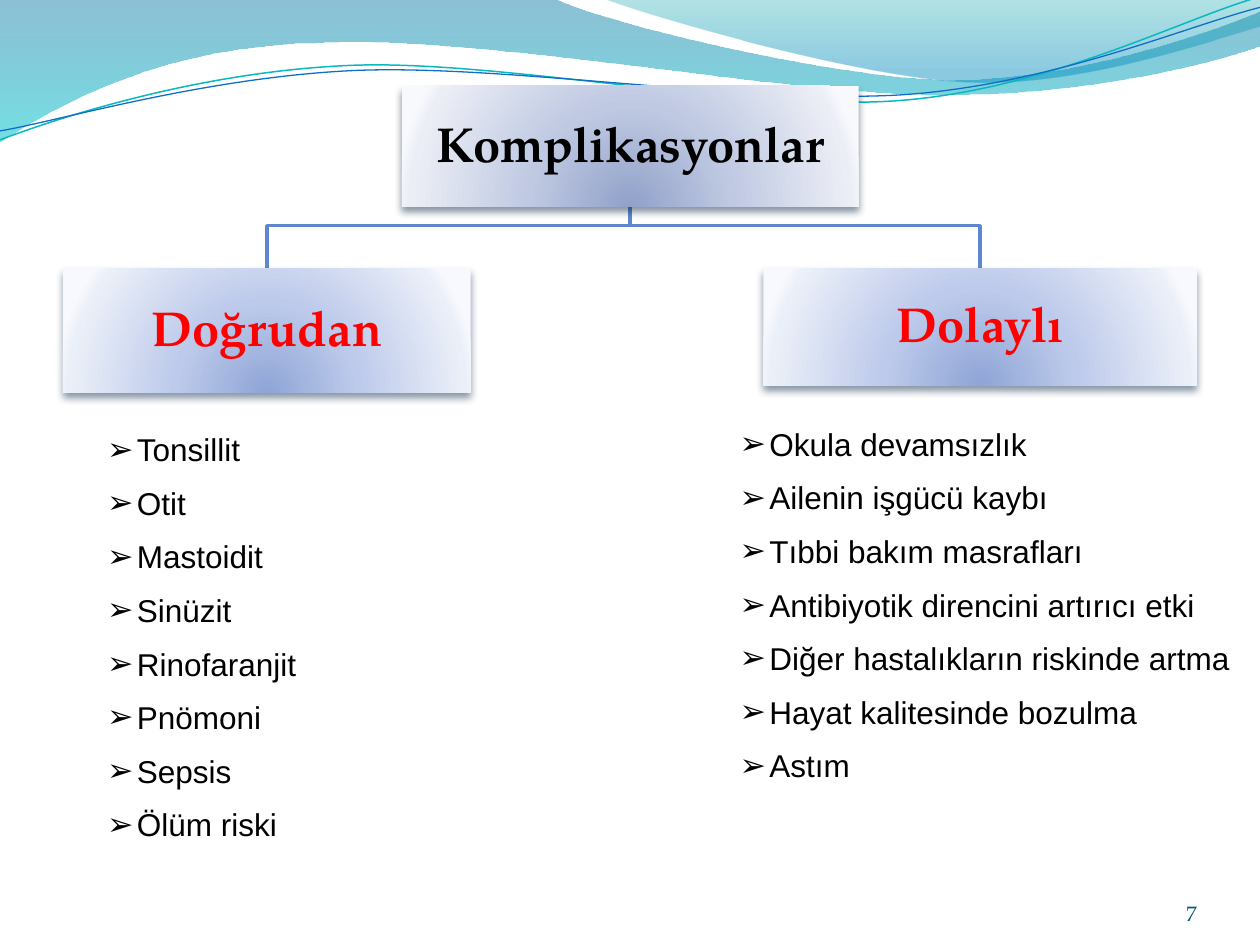
from dataclasses import dataclass

from lxml import etree
from pptx import Presentation
from pptx import util as u
from pptx.dml.color import RGBColor
from pptx.enum import shapes, text
from pptx.oxml.ns import qn

Cm, Pt = u.Cm, u.Pt


@dataclass(frozen=True)
class Theme:
    head_font: str = "TeX Gyre Pagella"
    body_font: str = "Arial"
    head_size: float = 28
    body_size: float = 18
    number_size: float = 12
    black: str = "000000"
    red: str = "FF0000"
    number: str = "045C75"
    link: str = "5E87CD"
    teal_line: str = "0AB8BF"
    blue_line: str = "0F6FC6"
    # Gradient stops: position %, colour, opacity %
    wide_wave: tuple = ((0, "0074A1", 45), (100, "00C6CF", 55))
    right_wave: tuple = ((0, "00A1A9", 30), (80, "008BBF", 45))
    root_box: tuple = ((0, "91A1C9", 100), (43, "BFC9E2", 100),
                       (93, "ECEEF6", 100), (100, "F8F9FD", 100))
    child_box: tuple = ((0, "8FA5D6", 100), (43, "BDCAEB", 100),
                        (93, "EBEFF8", 100), (100, "F7F9FE", 100))
    root_shadow: str = "031F39"
    child_shadow: str = "032341"


T = Theme()

# Wave outlines in cm: a start point, then lines (1 point) or curves (3 points)
WIDE_WAVE = [(0, -0.03), [(11.18, -0.03)],
             [(12.09, 0.43), (16.87, 1.6), (19.25, 1.6)],
             [(21.67, 1.6), (24.33, 0.66), (25.4, 0.23)], [(25.43, 0.91)],
             [(24.97, 1.12), (22.1, 1.93), (18.95, 1.91)],
             [(15.8, 1.91), (9.7, 0.71), (6.53, 0.86)],
             [(3.28, 0.89), (1.17, 2.11), (-0.03, 2.87)], [(0, -0.03)]]
RIGHT_WAVE = [(12.17, -0.03), [(12.93, 0.28), (17.32, 1.57), (19.53, 1.65)],
              [(21.74, 1.75), (24.41, 0.81), (25.4, 0.53)], [(25.4, 0)],
              [(12.17, -0.03)]]
TEAL_LINE = [(0, 2.82), [(1.22, 2.36), (4.01, 1.45), (7.04, 1.32)],
             [(10.03, 1.19), (15.06, 2.26), (18.11, 2.03)],
             [(21.16, 1.8), (23.83, 0.38), (25.35, -0.05)]]
BLUE_LINE = [(0, 2.64), [(1.19, 2.44), (4.17, 1.55), (7.19, 1.42)],
             [(10.24, 1.3), (15.16, 2.11), (18.21, 1.91)],
             [(21.23, 1.7), (23.9, 0.53), (25.4, 0.15)]]

DIRECT = ["Tonsillit", "Otit", "Mastoidit", "Sinüzit", "Rinofaranjit",
          "Pnömoni", "Sepsis", "Ölüm riski"]
INDIRECT = ["Okula devamsızlık", "Ailenin işgücü kaybı",
            "Tıbbi bakım masrafları", "Antibiyotik direncini artırıcı etki",
            "Diğer hastalıkların riskinde artma", "Hayat kalitesinde bozulma",
            "Astım"]


def add(parent, tag, **attrs):
    return etree.SubElement(parent, qn(tag), {k: str(v) for k, v in attrs.items()})


def add_color(parent, color, opacity):
    clr = add(parent, "a:srgbClr", val=color)
    if opacity < 100:
        add(clr, "a:alpha", val=opacity * 1000)


def set_font(font, name, size, color, bold=False):
    for key, value in dict(name=name, size=Pt(size), bold=bold).items():
        setattr(font, key, value)
    font.color.rgb = RGBColor.from_string(color)


def set_gradient(sp, stops, radial=False):
    sp.fill.background()
    sp_pr = sp._element.spPr
    grad = etree.Element(qn("a:gradFill"), rotWithShape="1")
    stop_list = add(grad, "a:gsLst")
    for pos, color, opacity in stops:
        add_color(add(stop_list, "a:gs", pos=pos * 1000), color, opacity)
    if radial:
        add(add(grad, "a:path", path="circle"), "a:fillToRect",
            l=50000, t=130000, r=50000, b=-30000)
    else:
        add(grad, "a:lin", ang=5400000, scaled=0)
    sp_pr.replace(sp_pr.find(qn("a:noFill")), grad)


def set_shadow(sp, color):
    effects = sp._element.spPr.find(qn("a:effectLst"))
    shadow = add(effects, "a:outerShdw", blurRad=Pt(4.5), dist=Pt(3),
                 dir=5400000, rotWithShape=0)
    add_color(shadow, color, 48)


def add_outline(s, start, segments, stops=None, line=None, width=0):
    """Draw lines and cubic curves, given in cm, as one freeform."""
    builder = s.shapes.build_freeform(*map(Cm, start), scale=1.0)
    points = [(Cm(x), Cm(y)) for segment in segments for x, y in segment]
    builder.add_line_segments(points, close=stops is not None)
    sp = builder.convert_to_shape()
    # Merge each run of three control points into one curve
    nodes = iter(list(sp._element.iter(qn("a:lnTo"))))
    for segment in segments:
        group = [next(nodes) for _ in segment]
        if len(group) == 3:
            curve = etree.Element(qn("a:cubicBezTo"))
            group[0].addprevious(curve)
            for node in group:
                curve.append(node[0])
                node.getparent().remove(node)
    sp.shadow.inherit = False
    if stops:
        set_gradient(sp, stops)
        sp.line.fill.background()
    else:
        sp.fill.background()
        sp.line.color.rgb = RGBColor.from_string(line)
        sp.line.width = Pt(width)


def add_waves(s):
    for path, style in ((WIDE_WAVE, dict(stops=T.wide_wave)),
                        (RIGHT_WAVE, dict(stops=T.right_wave)),
                        (TEAL_LINE, dict(line=T.teal_line, width=0.85)),
                        (BLUE_LINE, dict(line=T.blue_line, width=0.75))):
        add_outline(s, path[0], path[1:], **style)


def format_box(sp, label, box, color, stops, shadow):
    for key, value in zip(("left", "top", "width", "height"), box):
        setattr(sp, key, Cm(value))
    sp.shadow.inherit = False
    set_gradient(sp, stops, radial=True)
    sp.line.fill.background()
    set_shadow(sp, shadow)
    tf = sp.text_frame
    tf.text = label
    tf.word_wrap = True
    tf.auto_size = text.MSO_AUTO_SIZE.NONE
    tf.vertical_anchor = text.MSO_ANCHOR.MIDDLE
    for side in ("left", "top", "right", "bottom"):
        setattr(tf, f"margin_{side}", Cm(0.05))
    p = tf.paragraphs[0]
    p.alignment = text.PP_ALIGN.CENTER
    p.line_spacing = 0.9
    set_font(p.runs[0].font, T.head_font, T.head_size, color, bold=True)


def add_tree(s, root_label, root_box, children, bend_y):
    """Title box with an angled link down to each child box."""
    left, top, width, height = root_box
    mid, bottom = left + width / 2, top + height
    for _, (x, y, w, _) in reversed(children):
        end = x + w / 2
        add_outline(s, (mid, bottom), [[(mid, bend_y)], [(end, bend_y)], [(end, y)]],
                    line=T.link, width=2)
    root = s.shapes.title
    format_box(root, root_label, root_box, T.black, T.root_box, T.root_shadow)
    s.shapes._spTree.append(root._element)  # in front of the waves
    for label, box in children:
        sp = s.shapes.add_shape(shapes.MSO_SHAPE.RECTANGLE, 0, 0, 0, 0)
        format_box(sp, label, box, T.red, T.child_box, T.child_shadow)


def add_list(s, items, box):
    tf = s.shapes.add_textbox(*map(Cm, box)).text_frame
    tf.word_wrap = True
    tf.auto_size = text.MSO_AUTO_SIZE.SHAPE_TO_FIT_TEXT
    for i, item in enumerate(items):
        p = tf.add_paragraph() if i else tf.paragraphs[0]
        p_pr = p._p.get_or_add_pPr()
        p_pr.set("marL", str(Cm(0.6)))
        p_pr.set("indent", str(-Cm(0.6)))
        add(p_pr, "a:buFont", typeface=T.body_font)
        add(p_pr, "a:buChar", char="➢")
        p.space_before = Pt(9 if i else 0)
        r = p.add_run()
        r.text = item
        set_font(r.font, T.body_font, T.body_size, T.black)


def add_number(s, number, box):
    tf = s.shapes.add_textbox(*map(Cm, box)).text_frame
    tf.margin_left = tf.margin_top = tf.margin_right = tf.margin_bottom = 0
    tf.word_wrap = True
    tf.vertical_anchor = text.MSO_ANCHOR.BOTTOM
    p = tf.paragraphs[0]
    p.alignment = text.PP_ALIGN.RIGHT
    r = p.add_run()
    r.text = number
    set_font(r.font, T.head_font, T.number_size, T.number)


def main():
    prs = Presentation()
    prs.slide_width, prs.slide_height = Cm(25.4), Cm(19.05)
    s = prs.slides.add_slide(prs.slide_layouts[5])
    add_waves(s)
    # Hierarchy
    add_tree(s, "Komplikasyonlar", (8.1, 1.73, 9.21, 2.44),
             [("Doğrudan", (1.27, 5.41, 8.22, 2.51)),
              ("Dolaylı", (15.39, 5.41, 8.74, 2.36))], bend_y=4.55)
    # Lists and slide number
    add_list(s, DIRECT, (1.91, 8.55, 11.94, 9.12))
    add_list(s, INDIRECT, (14.66, 8.44, 10.72, 7.95))
    add_number(s, "7", (22.02, 17.65, 2.11, 1.02))
    prs.save("out.pptx")


if __name__ == "__main__":
    main()
